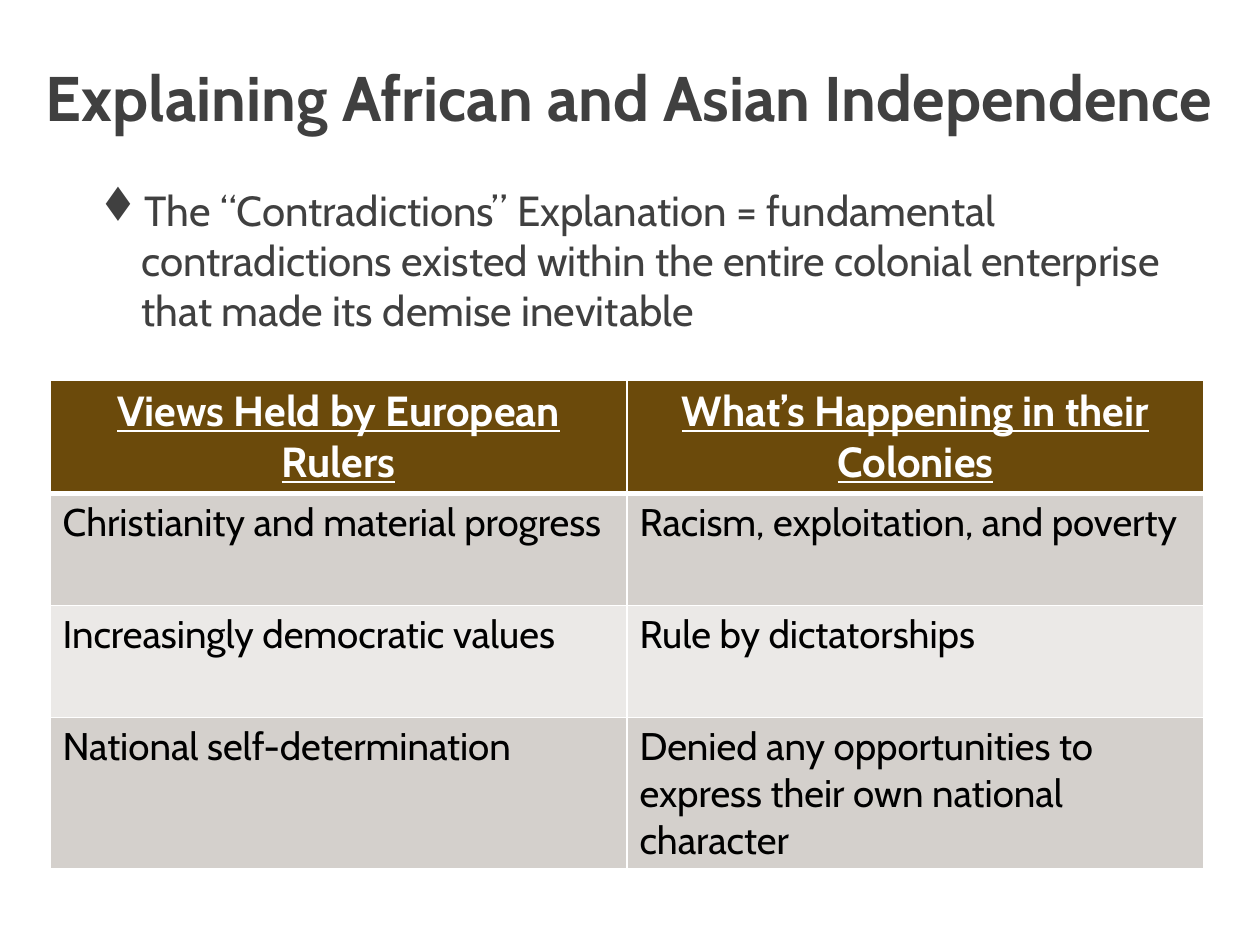
from dataclasses import dataclass

from lxml import etree
from pptx import Presentation
from pptx import util as u
from pptx.dml.color import RGBColor
from pptx.enum import text
from pptx.oxml.ns import qn

EMU_PER_PX = 914400 / 126


@dataclass(frozen=True)
class Theme:
    font: str = "Cabin"
    bullet_font: str = "Wingdings"
    ink: str = "404040"
    cell_ink: str = "000000"
    white: str = "FFFFFF"
    header_fill: str = "6B4A0B"
    band_fills: tuple[str, str] = ("D4D0CC", "EBE9E7")
    title_size: int = 36
    body_size: int = 24
    cell_size: int = 22


@dataclass(frozen=True)
class Box:
    left: int
    top: int
    width: int
    height: int

    def emu(self) -> tuple[u.Emu, ...]:
        return tuple(px(n) for n in (self.left, self.top, self.width, self.height))


@dataclass(frozen=True)
class Contradiction:
    view: str
    reality: str


THEME = Theme()
HEADER = Contradiction("Views Held by European Rulers", "What’s Happening in their Colonies")
CONTRADICTIONS = (
    Contradiction("Christianity and material progress", "Racism, exploitation, and poverty"),
    Contradiction("Increasingly democratic values", "Rule by dictatorships"),
    Contradiction("National self-determination",
                  "Denied any opportunities to express their own national character"),
)
TITLE_BOX = Box(28, 38, 1202, 102)
BODY_BOX = Box(90, 178, 1115, 188)
ROW_HEIGHT = 112
TABLE_BOX = Box(50, 380, 1154, ROW_HEIGHT * (len(CONTRADICTIONS) + 1))
BULLET_INDENT = 39
LOZENGE = "t"  # the bullet font draws this letter as ⬧


def px(length: int) -> u.Emu:
    return u.Emu(round(length * EMU_PER_PX))


def style(paragraph, size: int, color: str, bold: bool = False, underline: bool = False) -> None:
    font = paragraph.font
    font.name = THEME.font
    font.size = u.Pt(size)
    font.bold = bold
    font.underline = underline
    font.color.rgb = RGBColor.from_string(color)


def add_text(slide, box: Box, wording: str):
    """Add a wrapping text box and return its frame."""
    frame = slide.shapes.add_textbox(*box.emu()).text_frame
    frame.word_wrap = True
    frame.text = wording
    return frame


def add_bullet(paragraph, character: str) -> None:
    """Give the paragraph a hanging bullet from the symbol font."""
    properties = paragraph._p.get_or_add_pPr()
    indent = px(BULLET_INDENT)
    properties.set("marL", str(indent))
    properties.set("indent", str(-indent))
    etree.SubElement(properties, qn("a:buFont"), typeface=THEME.bullet_font, charset="2")
    etree.SubElement(properties, qn("a:buChar"), char=character)


def set_borders(cell, bottom: int) -> None:
    """Draw white borders, 1 pt except for the given bottom width."""
    properties = cell._tc.get_or_add_tcPr()
    for side, width in (("L", 1), ("R", 1), ("T", 1), ("B", bottom)):
        line = etree.SubElement(properties, qn(f"a:ln{side}"), w=str(u.Pt(width)))
        fill = etree.SubElement(line, qn("a:solidFill"))
        etree.SubElement(fill, qn("a:srgbClr"), val=THEME.white)


def fill_row(row, contradiction: Contradiction, index: int) -> None:
    is_header = index == 0
    fill = THEME.header_fill if is_header else THEME.band_fills[(index - 1) % 2]
    row.height = px(ROW_HEIGHT)
    for cell, wording in zip(row.cells, (contradiction.view, contradiction.reality)):
        set_borders(cell, bottom=3 if is_header else 1)
        cell.fill.solid()
        cell.fill.fore_color.rgb = RGBColor.from_string(fill)
        cell.text = wording
        paragraph = cell.text_frame.paragraphs[0]
        if is_header:
            paragraph.alignment = text.PP_ALIGN.CENTER
            style(paragraph, THEME.body_size, THEME.white, bold=True, underline=True)
        else:
            style(paragraph, THEME.cell_size, THEME.cell_ink)


def add_contradictions_table(slide) -> None:
    rows = (HEADER, *CONTRADICTIONS)
    table = slide.shapes.add_table(len(rows), 2, *TABLE_BOX.emu()).table
    for index, contradiction in enumerate(rows):
        fill_row(table.rows[index], contradiction, index)


def main() -> None:
    presentation = Presentation()
    presentation.slide_width, presentation.slide_height = px(1260), px(945)
    slide = presentation.slides.add_slide(presentation.slide_layouts[6])

    title = add_text(slide, TITLE_BOX, "Explaining African and Asian Independence")
    title.vertical_anchor = text.MSO_ANCHOR.MIDDLE
    heading = title.paragraphs[0]
    heading.alignment = text.PP_ALIGN.CENTER
    heading.line_spacing = u.Pt(52)
    style(heading, THEME.title_size, THEME.ink, bold=True)

    body = add_text(
        slide, BODY_BOX,
        "The “Contradictions” Explanation = fundamental contradictions existed within "
        "the entire colonial enterprise that made its demise inevitable")
    explanation = body.paragraphs[0]
    add_bullet(explanation, LOZENGE)
    style(explanation, THEME.body_size, THEME.ink)

    add_contradictions_table(slide)
    presentation.save("out.pptx")


if __name__ == "__main__":
    main()
